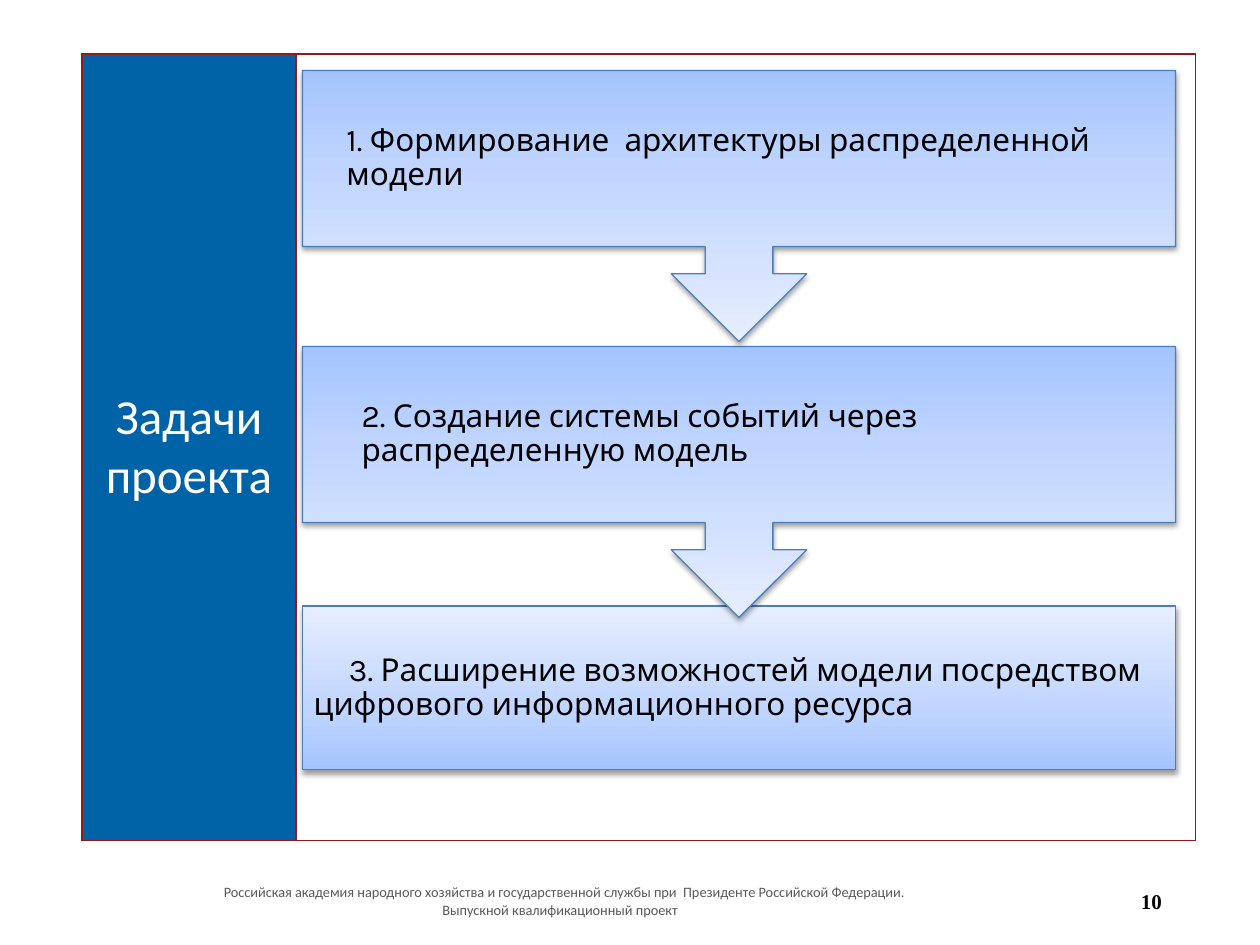
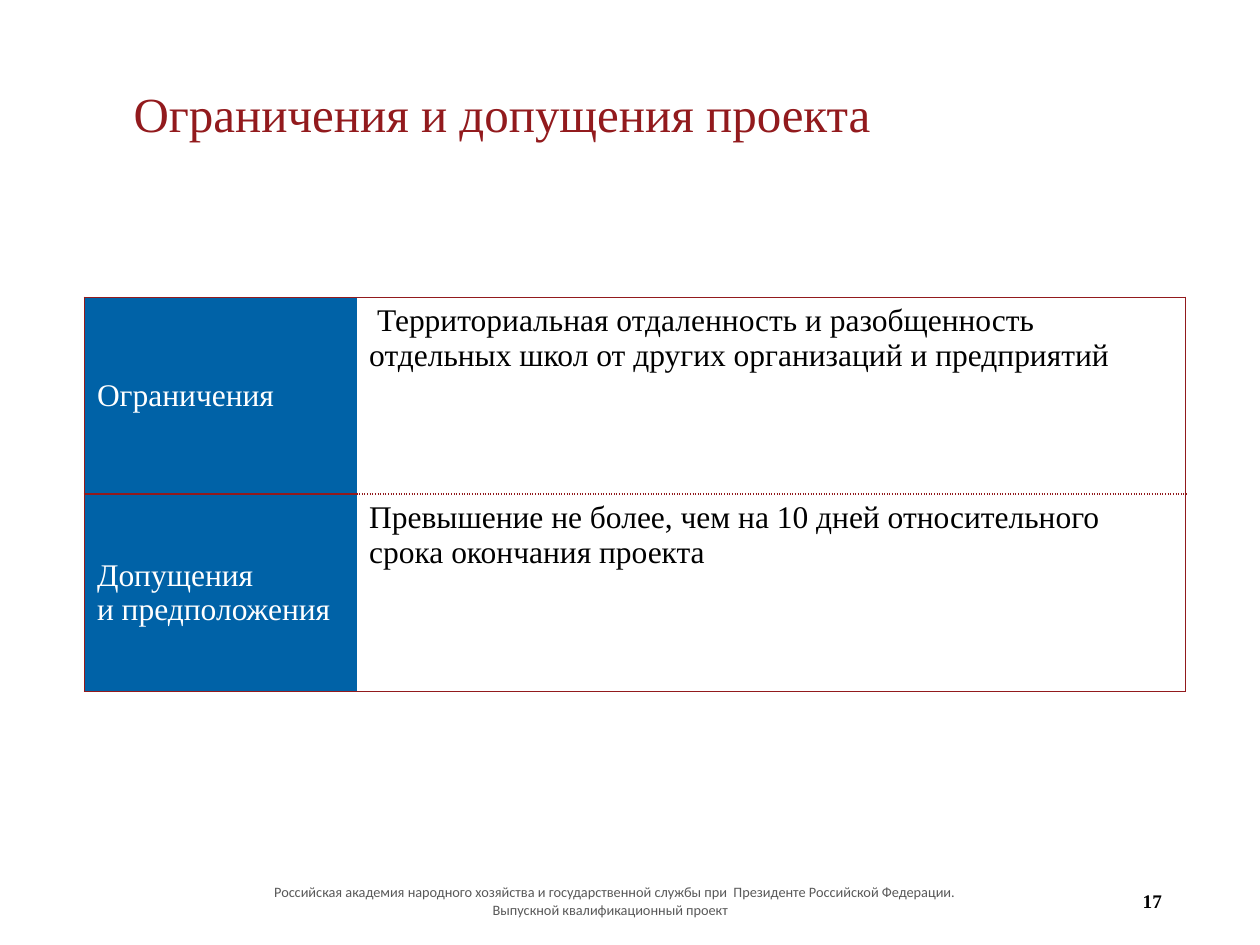
"""Builds two project slides: a chain of tasks and a table of constraints."""
from dataclasses import dataclass

from lxml.etree import SubElement
from pptx import Presentation
from pptx.dml.color import RGBColor
from pptx.enum.shapes import MSO_SHAPE
from pptx.enum.text import MSO_ANCHOR, MSO_AUTO_SIZE, PP_ALIGN
from pptx.oxml import parse_xml
from pptx.oxml.ns import nsdecls, qn
from pptx.util import Inches, Pt

COLORS = {
    "blue": "0062A7",
    "red": "921A1D",
    "white": "FFFFFF",
    "black": "000000",
    "gray": "595959",
    "outline": "4B7EBC",
}
TASK_GRADIENT = [(0, "A4C4FF"), (35, "BFD4FF"), (100, "E6EEFF")]
TITLE_ONLY, BLANK = 5, 6
FOOTER_LINES = [
    "Российская академия народного хозяйства и государственной службы при  Президенте Российской Федерации.",
    "Выпускной квалификационный проект",
]


@dataclass
class TextStyle:
    """Font, size and colour of a kind of text."""
    font: str
    size: float
    color: str
    bold: bool = False
    align: PP_ALIGN = PP_ALIGN.LEFT
    spacing: float = 1.0


SERIF = "Times New Roman"
FOOTER = TextStyle("Calibri", 8.2, "gray", align=PP_ALIGN.CENTER)
TASK = TextStyle("Karla", 18, "black", spacing=0.9)
SIDE_TITLE = TextStyle("Calibri", 28, "white", align=PP_ALIGN.CENTER)
TITLE = TextStyle(SERIF, 28, "red", spacing=0.9)
ROW_HEAD = TextStyle(SERIF, 18, "white")
ROW_BODY = TextStyle(SERIF, 18, "black")


def rgb(name):
    """Return a palette colour."""
    return RGBColor.from_string(COLORS[name])


def write_lines(frame, lines, style):
    """Write each line as a paragraph of one run."""
    for index, line in enumerate(lines):
        para = frame.paragraphs[0] if index == 0 else frame.add_paragraph()
        para.alignment = style.align
        para.line_spacing = style.spacing
        span = para.add_run()
        span.text = line
        span.font.name = style.font
        span.font.size = Pt(style.size)
        span.font.bold = style.bold
        span.font.color.rgb = rgb(style.color)


def add_text(page, place, lines, style, insets=(0.1, 0.05, 0.1, 0.05)):
    """Add a wrapped, vertically centred text box."""
    box = page.shapes.add_textbox(*map(Inches, place))
    frame = box.text_frame
    frame.word_wrap = True
    frame.vertical_anchor = MSO_ANCHOR.MIDDLE
    (frame.margin_left, frame.margin_top,
     frame.margin_right, frame.margin_bottom) = map(Inches, insets)
    write_lines(frame, lines, style)
    return box


def set_indent(para, left=0, first=0):
    """Set the left margin and first-line indent of a paragraph."""
    properties = para._p.get_or_add_pPr()
    properties.set("marL", str(Inches(left)))
    properties.set("indent", str(Inches(first)))


def add_footer(page, left, width, number, number_size):
    """Add the institution footer and the page number."""
    box = add_text(page, (left, 6.95, width, 0.4), FOOTER_LINES, FOOTER)
    set_indent(box.text_frame.paragraphs[0], left=0.07)
    style = TextStyle(SERIF, number_size, "black", bold=True, align=PP_ALIGN.RIGHT)
    add_text(page, (7.07, 6.95, 2.25, 0.4), [number], style)


def add_task_shape(page, kind, place, rotation=0):
    """Add a gradient block with a soft shadow below it."""
    shape = page.shapes.add_shape(kind, *map(Inches, place))
    shape.rotation = rotation
    shape.line.color.rgb = rgb("outline")
    shape.line.width = Pt(0.75)
    stops = "".join(
        f'<a:gs pos="{position * 1000}"><a:srgbClr val="{color}"/></a:gs>'
        for position, color in TASK_GRADIENT)
    properties = shape._element.spPr
    properties.find(qn("a:prstGeom")).addnext(parse_xml(
        f'<a:gradFill {nsdecls("a")} rotWithShape="1"><a:gsLst>{stops}</a:gsLst>'
        '<a:lin ang="16200000" scaled="0"/></a:gradFill>'))
    properties.append(parse_xml(
        f'<a:effectLst {nsdecls("a")}><a:outerShdw blurRad="{Pt(3.1)}" dist="{Pt(1.6)}"'
        f' dir="5400000" rotWithShape="0"><a:srgbClr val="{COLORS["black"]}">'
        '<a:alpha val="38000"/></a:srgbClr></a:outerShdw></a:effectLst>'))


def set_borders(cell, **dashes):
    """Draw red borders on the named sides and clear the others."""
    properties = cell._tc.get_or_add_tcPr()
    for index, side in enumerate("LRTB"):
        line = properties.makeelement(qn(f"a:ln{side}"), {"w": str(Pt(1))})
        if side in dashes:
            fill = SubElement(line, qn("a:solidFill"))
            SubElement(fill, qn("a:srgbClr"), val=COLORS["red"])
            SubElement(line, qn("a:prstDash"), val=dashes[side])
        else:
            SubElement(line, qn("a:noFill"))
        properties.insert(index, line)


def add_grid(page, left, top, widths, heights):
    """Add a table without banding, with the given columns and rows."""
    table = page.shapes.add_table(
        len(heights), len(widths), Inches(left), Inches(top),
        Inches(sum(widths)), Inches(sum(heights))).table
    table.first_row = table.horz_banding = False
    for column, width in zip(table.columns, widths):
        column.width = Inches(width)
    for row, height in zip(table.rows, heights):
        row.height = Inches(height)
    return table


def fill_cell(cell, color, lines=(), style=None, anchor=MSO_ANCHOR.TOP):
    """Colour a cell and write its text."""
    cell.fill.solid()
    cell.fill.fore_color.rgb = rgb(color)
    cell.vertical_anchor = anchor
    write_lines(cell.text_frame, lines, style)


def build_tasks(deck):
    """Build the slide with the chain of project tasks."""
    page = deck.slides.add_slide(deck.slide_layouts[BLANK])
    add_footer(page, 0.35, 8.19, "10", 12)
    table = add_grid(page, 0.65, 0.43, [1.7, 7.14], [6.24])
    heading, area = table.cell(0, 0), table.cell(0, 1)
    fill_cell(heading, "blue", ["Задачи", "проекта"], SIDE_TITLE, MSO_ANCHOR.MIDDLE)
    fill_cell(area, "white")
    for cell in (heading, area):
        set_borders(cell, L="solid", R="solid", T="solid", B="solid")

    left, width = 2.4, 6.93
    last_place = (left, 4.81, width, 1.3)
    add_task_shape(page, MSO_SHAPE.RECTANGLE, last_place)
    box = add_text(
        page, last_place,
        ["3. Расширение возможностей модели посредством цифрового информационного ресурса"],
        TASK, (0.09,) * 4)
    set_indent(box.text_frame.paragraphs[0], first=0.28)
    callouts = [
        (2.75, 0.47, "2. Создание системы событий через распределенную модель"),
        (0.56, 0.35, "1. Формирование  архитектуры распределенной модели"),
    ]
    for top, inset, task in callouts:
        add_task_shape(page, MSO_SHAPE.UP_ARROW_CALLOUT, (left, top, width, 2.15), 180)
        add_text(page, (left, top, width, 1.39), [task], TASK, (inset, 0.14, 0.14, 0.14))


def build_constraints(deck):
    """Build the slide with the table of constraints and assumptions."""
    page = deck.slides.add_slide(deck.slide_layouts[TITLE_ONLY])
    add_footer(page, 0.83, 8.03, "17", 11)
    title = page.shapes.title
    title.left, title.top, title.width, title.height = map(Inches, (0.96, 0.42, 7.34, 1.01))
    title.text_frame.auto_size = MSO_AUTO_SIZE.NONE
    title.text_frame.vertical_anchor = MSO_ANCHOR.MIDDLE
    write_lines(title.text_frame, ["Ограничения и допущения проекта"], TITLE)

    rows = [
        (["Ограничения"],
         " Территориальная отдаленность и разобщенность отдельных школ от других организаций и предприятий",
         {"T": "solid", "B": "sysDot"}),
        (["Допущения", "и предположения"],
         "Превышение не более, чем на 10 дней относительного срока окончания проекта",
         {"T": "sysDot", "B": "solid"}),
    ]
    table = add_grid(page, 0.67, 2.36, [2.16, 6.58], [1.56, 1.57])
    for index, (heading, body, edges) in enumerate(rows):
        head_cell, body_cell = table.cell(index, 0), table.cell(index, 1)
        fill_cell(head_cell, "blue", heading, ROW_HEAD, MSO_ANCHOR.MIDDLE)
        fill_cell(body_cell, "white", [body], ROW_BODY)
        set_borders(head_cell, L="solid", T="solid", B="solid")
        set_borders(body_cell, R="solid", **edges)


def main():
    """Build and save the deck."""
    deck = Presentation()
    deck.slide_width, deck.slide_height = Inches(10), Inches(7.5)
    build_tasks(deck)
    build_constraints(deck)
    deck.save("out.pptx")


if __name__ == "__main__":
    main()
